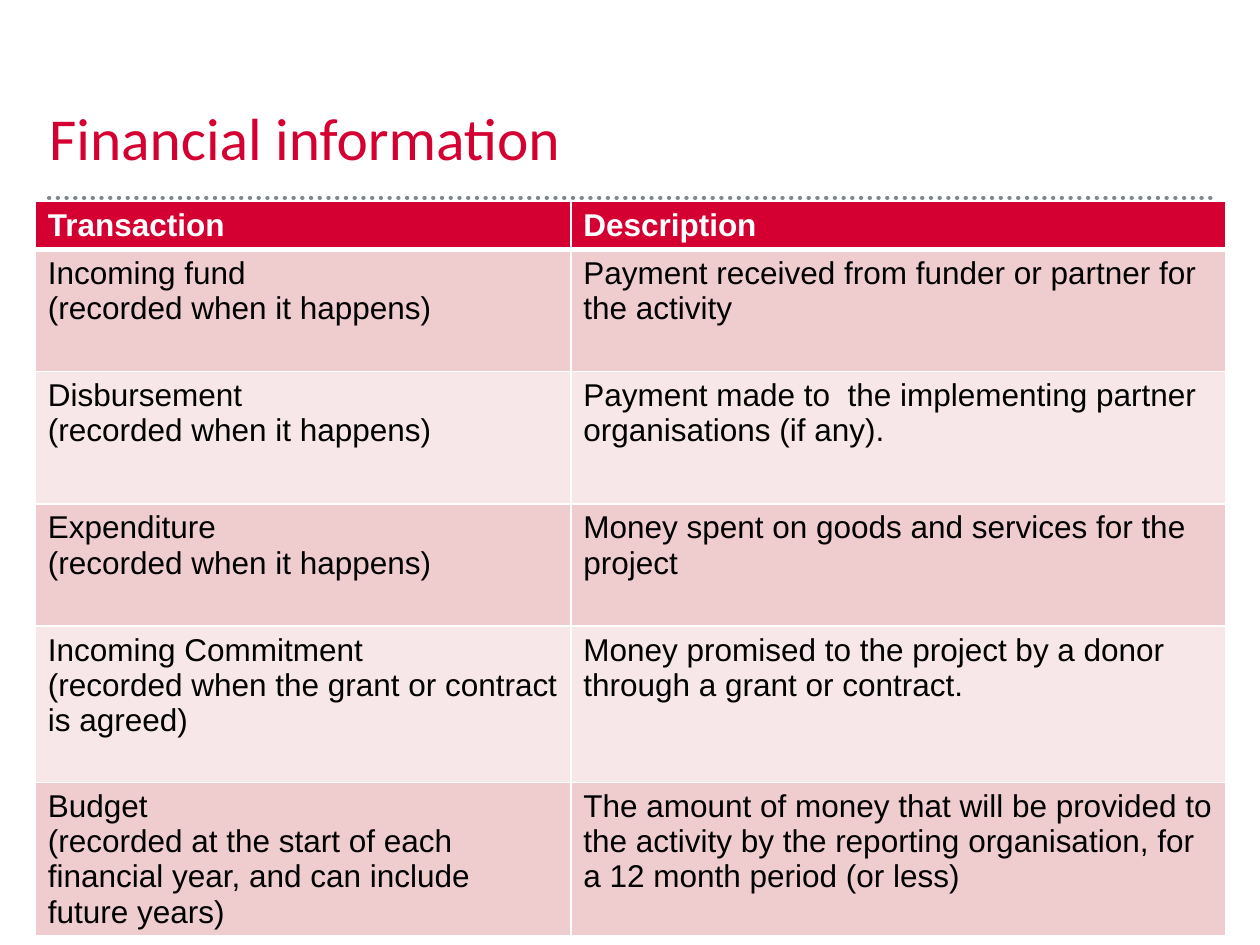
from dataclasses import dataclass
from typing import Any

from lxml import etree
from pptx import Presentation
from pptx import util as u
from pptx.dml.color import RGBColor
from pptx.enum import dml, shapes, text
from pptx.oxml import ns

RED, GREY, WHITE, BLACK = "D50032", "7C878E", "FFFFFF", "000000"
BANDS = ["EFCCCE", "F7E7E8"]
WIDTHS = [4.25, 5.2]
HEIGHTS = [0.37, 0.97, 1.05, 0.97, 1.24, 1.22]
ROWS = [
    ("Transaction", "Description"),
    ("Incoming fund\n(recorded when it happens)",
     "Payment received from funder or partner for the activity"),
    ("Disbursement\n(recorded when it happens)",
     "Payment made to  the implementing partner organisations (if any)."),
    ("Expenditure\n(recorded when it happens)",
     "Money spent on goods and services for the project"),
    ("Incoming Commitment\n(recorded when the grant or contract is agreed)",
     "Money promised to the project by a donor through a grant or contract."),
    ("Budget\n(recorded at the start of each financial year, and can include future years)",
     "The amount of money that will be provided to the activity by the "
     "reporting organisation, for a 12 month period (or less)"),
]


def color(code):
    return RGBColor.from_string(code)


def apply(item, values):
    for name, value in values.items():
        setattr(item, name, value)


@dataclass
class Deck:
    slide: Any
    head: str = "Calibri"
    body: str = "Arial"

    def font(self, part, tint, **values):
        apply(part.font, values)
        part.font.color.rgb = color(tint)

    def title(self, words, left, top, width, height):
        shape = self.slide.shapes.title
        apply(shape, dict(left=u.Inches(left), top=u.Inches(top),
                          width=u.Inches(width), height=u.Inches(height)))
        frame = shape.text_frame
        frame.text = words
        apply(frame, dict(margin_left=0, margin_top=0, margin_right=0,
                          margin_bottom=0, word_wrap=True,
                          auto_size=text.MSO_AUTO_SIZE.NONE,
                          vertical_anchor=text.MSO_ANCHOR.BOTTOM))
        para = frame.paragraphs[0]
        apply(para, dict(alignment=text.PP_ALIGN.LEFT, line_spacing=u.Pt(36)))
        self.font(para.runs[0], RED, name=self.head, size=u.Pt(34), bold=False)

    def rule(self, left, right, top):
        line = self.slide.shapes.add_connector(
            shapes.MSO_CONNECTOR.STRAIGHT, u.Inches(left), u.Inches(top),
            u.Inches(right), u.Inches(top))
        apply(line.line, dict(width=u.Pt(2.5),
                              dash_style=dml.MSO_LINE.ROUND_DOT))
        line.line.color.rgb = color(GREY)
        props = line._element.spPr
        props.find(ns.qn("a:ln")).set("cap", "rnd")
        etree.SubElement(props, ns.qn("a:effectLst"))

    def border(self, cell, base):
        props = cell._tc.get_or_add_tcPr()
        for spot, side in enumerate("LRTB"):
            width = base if side == "B" else 1
            edge = etree.Element(ns.qn(f"a:ln{side}"), w=str(u.Pt(width)))
            fill = etree.SubElement(edge, ns.qn("a:solidFill"))
            etree.SubElement(fill, ns.qn("a:srgbClr"), val=WHITE)
            props.insert(spot, edge)

    def cell(self, cell, words, top, band):
        cell.text = words
        cell.fill.solid()
        cell.fill.fore_color.rgb = color(RED if top else band)
        for para in cell.text_frame.paragraphs:
            for run in para.runs:
                self.font(run, WHITE if top else BLACK, name=self.body,
                          size=u.Pt(18), bold=top)
        self.border(cell, 3 if top else 1)

    def table(self, rows, left, top):
        grid = self.slide.shapes.add_table(
            len(rows), len(WIDTHS), u.Inches(left), u.Inches(top),
            u.Inches(sum(WIDTHS)), u.Inches(sum(HEIGHTS))).table
        for col, width in zip(grid.columns, WIDTHS):
            col.width = u.Inches(width)
        for i, (row, height) in enumerate(zip(grid.rows, HEIGHTS)):
            row.height = u.Inches(height)
            for cell, words in zip(row.cells, rows[i]):
                self.cell(cell, words, i == 0, BANDS[(i + 1) % 2])


def main():
    prs = Presentation()
    apply(prs, dict(slide_width=u.Inches(10), slide_height=u.Inches(7.5)))
    deck = Deck(prs.slides.add_slide(prs.slide_layouts[5]))
    deck.rule(0.39, 9.61, 1.57)
    deck.title("Financial information", 0.39, 0.39, 9.21, 0.98)
    deck.table(ROWS, 0.28, 1.6)
    prs.save("out.pptx")


if __name__ == "__main__":
    main()
